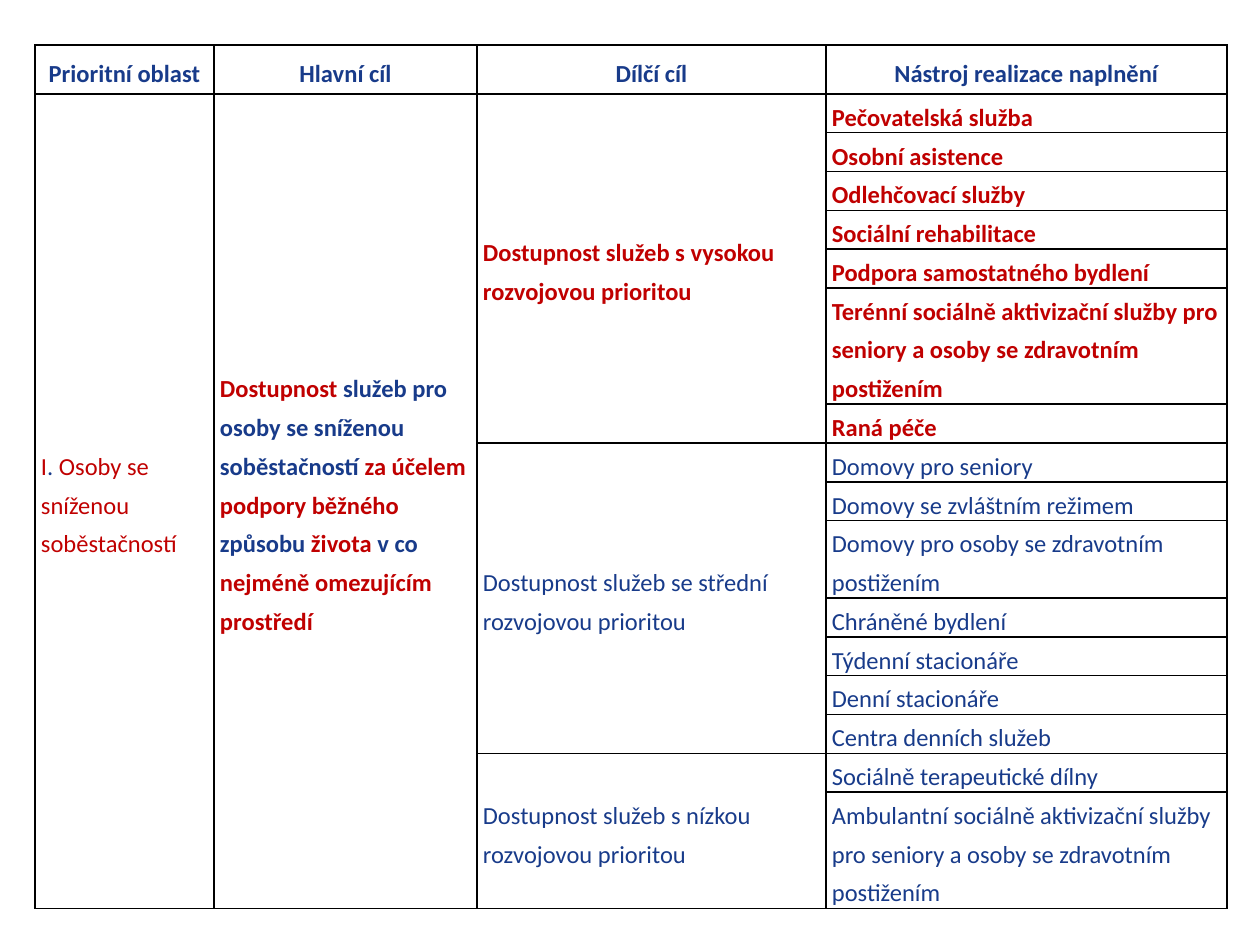
from dataclasses import dataclass
from itertools import accumulate

from lxml.etree import SubElement
from pptx import Presentation
from pptx.dml.color import RGBColor
from pptx.enum.text import MSO_ANCHOR, PP_ALIGN
from pptx.oxml.ns import qn
from pptx.util import Pt

PX = 7257


@dataclass(frozen=True)
class Theme:
    font: str = "Calibri"
    size: int = 14
    blue: str = "183B8A"
    red: str = "C00000"
    border: str = "000000"
    border_width: int = 1
    line_spacing: float = 1.3
    space_after: int = 8
    side_margin: int = 6


THEME = Theme()
BLUE, RED = THEME.blue, THEME.red

COLUMN_WIDTHS = [179, 263, 349, 401]
HEADER_HEIGHT = 49
ROW_HEIGHTS = {1: 34, 2: 72, 3: 110}
HEADERS = ["Prioritní oblast", "Hlavní cíl", "Dílčí cíl", "Nástroj realizace naplnění"]

AREA = [("I", RED), (". ", BLUE), ("Osoby se sníženou soběstačností", RED)]
MAIN_GOAL = [
    ("Dostupnost", RED),
    (" služeb pro osoby se sníženou soběstačností ", BLUE),
    ("za účelem podpory běžného ", RED),
    ("způsobu", BLUE),
    (" života ", RED),
    ("v co ", BLUE),
    ("nejméně omezujícím prostředí", RED),
]
GOALS = [
    ("Dostupnost služeb s vysokou rozvojovou prioritou", RED, True, [
        ("Pečovatelská služba", 1),
        ("Osobní asistence", 1),
        ("Odlehčovací služby", 1),
        ("Sociální rehabilitace", 1),
        ("Podpora samostatného bydlení", 1),
        ("Terénní sociálně aktivizační služby pro seniory a osoby se zdravotním postižením", 3),
        ("Raná péče", 1),
    ]),
    ("Dostupnost služeb se střední rozvojovou prioritou", BLUE, False, [
        ("Domovy pro seniory", 1),
        ("Domovy se zvláštním režimem", 1),
        ("Domovy pro osoby se zdravotním postižením", 2),
        ("Chráněné bydlení", 1),
        ("Týdenní stacionáře", 1),
        ("Denní stacionáře", 1),
        ("Centra denních služeb", 1),
    ]),
    ("Dostupnost služeb s nízkou rozvojovou prioritou", BLUE, False, [
        ("Sociálně terapeutické dílny", 1),
        ("Ambulantní sociálně aktivizační služby pro seniory a osoby se zdravotním postižením", 3),
    ]),
]


def px(length):
    return length * PX


def add_borders(cell):
    properties = cell._tc.get_or_add_tcPr()
    for side in ("a:lnL", "a:lnR", "a:lnT", "a:lnB"):
        line = SubElement(properties, qn(side), w=str(Pt(THEME.border_width)))
        fill = SubElement(line, qn("a:solidFill"))
        SubElement(fill, qn("a:srgbClr"), val=THEME.border)


def style_cell(cell):
    add_borders(cell)
    cell.fill.background()
    cell.vertical_anchor = MSO_ANCHOR.MIDDLE
    cell.margin_left = cell.margin_right = px(THEME.side_margin)
    cell.margin_top = cell.margin_bottom = 0


def write_cell(cell, spans, bold, align=PP_ALIGN.LEFT):
    para = cell.text_frame.paragraphs[0]
    para.alignment = align
    para.line_spacing = THEME.line_spacing
    para.space_after = Pt(THEME.space_after)
    for text, color in spans:
        span = para.add_run()
        span.text = text
        span.font.name = THEME.font
        span.font.size = Pt(THEME.size)
        span.font.bold = bold
        span.font.color.rgb = RGBColor.from_string(color)


def add_grid(page, heights):
    frame = page.shapes.add_table(
        len(heights), len(COLUMN_WIDTHS), px(35), px(45), px(sum(COLUMN_WIDTHS)), px(sum(heights))
    )
    table = frame.table
    table.first_row = table.horz_banding = False
    for column, width in zip(table.columns, COLUMN_WIDTHS):
        column.width = px(width)
    for row, height in zip(table.rows, heights):
        row.height = px(height)
    for cell in table.iter_cells():
        style_cell(cell)
    return table


def fill_goal(table, first, goal):
    title, color, bold, tools = goal
    table.cell(first, 2).merge(table.cell(first + len(tools) - 1, 2))
    write_cell(table.cell(first, 2), [(title, color)], bold)
    for row, (tool, _) in enumerate(tools, first):
        write_cell(table.cell(row, 3), [(tool, color)], bold)


def main():
    deck = Presentation()
    deck.slide_width, deck.slide_height = px(1260), px(945)
    page = deck.slides.add_slide(deck.slide_layouts[6])

    heights = [HEADER_HEIGHT] + [ROW_HEIGHTS[lines] for *_, tools in GOALS for _, lines in tools]
    table = add_grid(page, heights)
    for column, header in enumerate(HEADERS):
        write_cell(table.cell(0, column), [(header, BLUE)], True, PP_ALIGN.CENTER)
    for column, spans, bold in ((0, AREA, False), (1, MAIN_GOAL, True)):
        table.cell(1, column).merge(table.cell(len(heights) - 1, column))
        write_cell(table.cell(1, column), spans, bold)
    starts = accumulate((len(tools) for *_, tools in GOALS), initial=1)
    for first, goal in zip(starts, GOALS):
        fill_goal(table, first, goal)

    deck.save("out.pptx")


if __name__ == "__main__":
    main()
